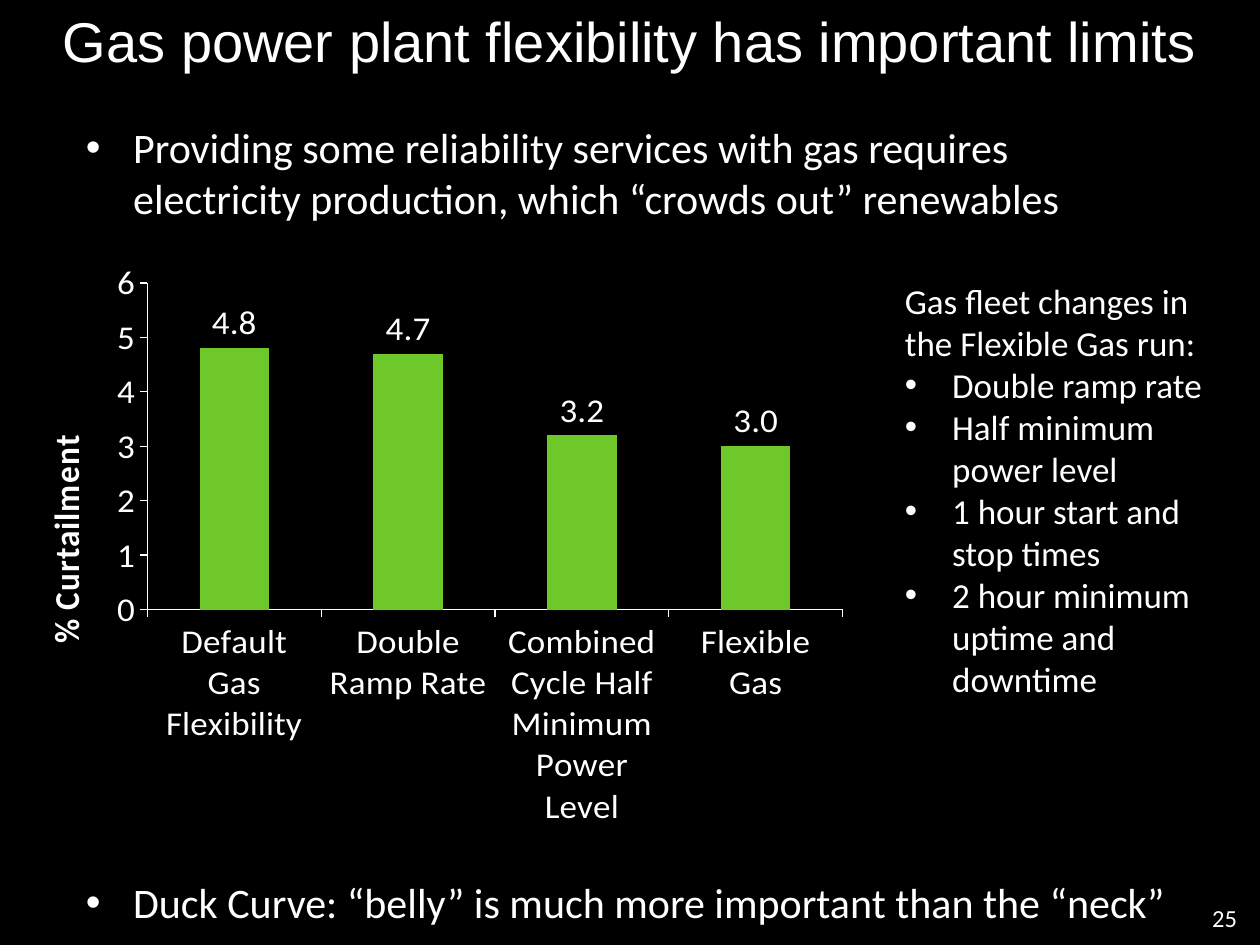
from lxml import etree
from pptx import Presentation
from pptx.chart.data import CategoryChartData
from pptx.dml.color import RGBColor
from pptx.enum.chart import XL_CHART_TYPE as ChartType, XL_LABEL_POSITION as LabelPosition, XL_TICK_MARK as TickMark
from pptx.enum.shapes import MSO_SHAPE as Preset
from pptx.enum.text import MSO_ANCHOR as Anchor, PP_ALIGN as Align
from pptx.oxml import parse_xml
from pptx.oxml.ns import nsdecls, qn
from pptx.util import Pt

COLORS = {"background": "000000", "text": "FFFFFF", "bar": "6EC829"}
INDENT = 27


def color(name):
    return RGBColor.from_string(COLORS[name])


def write(paragraph, text, size=20, font="Calibri", align=Align.LEFT, bullet=False):
    paragraph.alignment = align
    run = paragraph.add_run()
    run.text = text
    run.font.size = Pt(size)
    run.font.name = font
    run.font.color.rgb = color("text")
    if bullet:
        properties = paragraph._p.get_or_add_pPr()
        properties.set("marL", str(Pt(INDENT)))
        properties.set("indent", str(-Pt(INDENT)))
        etree.SubElement(properties, qn("a:buFont")).set("typeface", "Arial")
        etree.SubElement(properties, qn("a:buChar")).set("char", "•")


class SlideBuilder:
    """Hold the style and current slide, and add each kind of element."""

    def __init__(self, presentation):
        self.slide = presentation.slides.add_slide(presentation.slide_layouts[6])
        fill = self.slide.background.fill
        fill.solid()
        fill.fore_color.rgb = color("background")

    def title(self, text, box):
        shape = self.slide.shapes.add_shape(Preset.RECTANGLE, *map(Pt, box))
        shape.shadow.inherit = False
        shape.fill.solid()
        shape.fill.fore_color.rgb = color("background")
        fill_color = shape.fill._xPr.find(".//" + qn("a:srgbClr"))
        etree.SubElement(fill_color, qn("a:alpha")).set("val", "40000")
        shape.line.fill.background()
        frame = shape.text_frame
        frame.word_wrap = True
        frame.vertical_anchor = Anchor.TOP
        write(frame.paragraphs[0], text, size=32, font="Arial", align=Align.CENTER)

    def text(self, lines, box, anchor=Anchor.TOP, first_bullet=True, **style):
        frame = self.slide.shapes.add_textbox(*map(Pt, box)).text_frame
        frame.word_wrap = True
        frame.vertical_anchor = anchor
        for index, line in enumerate(lines):
            paragraph = frame.add_paragraph() if index else frame.paragraphs[0]
            write(paragraph, line, bullet=index > 0 or first_bullet, **style)

    def column_chart(self, values, axis_title, box, plot):
        data = CategoryChartData(number_format="#,##0.0")
        data.categories = list(values)
        data.add_series("Series 1", list(values.values()))
        frame = self.slide.shapes.add_chart(ChartType.COLUMN_CLUSTERED, *map(Pt, box), data)
        chart = frame.chart
        chart.has_legend = False
        chart.has_title = False
        chart.font.size = Pt(20)
        chart.font.name = "Calibri"
        chart.font.color.rgb = color("text")

        for axis in (chart.category_axis, chart.value_axis):
            axis.has_major_gridlines = False
            axis.major_tick_mark = TickMark.OUTSIDE
            axis.minor_tick_mark = TickMark.NONE
            axis.format.line.color.rgb = color("text")
            axis.format.line.width = Pt(0.75)
        value_axis = chart.value_axis
        value_axis.minimum_scale = 0
        value_axis.maximum_scale = 6
        value_axis.major_unit = 1
        value_axis.tick_labels.number_format = "0"
        value_axis.tick_labels.number_format_is_linked = False
        write(value_axis.axis_title.text_frame.paragraphs[0], axis_title, align=None)
        value_axis.axis_title.text_frame.paragraphs[0].runs[0].font.bold = True

        bars = chart.plots[0]
        bars.gap_width = 150
        bars.vary_by_categories = False
        series = bars.series[0]
        series.format.fill.solid()
        series.format.fill.fore_color.rgb = color("bar")
        labels = series.data_labels
        labels.show_value = True
        labels.number_format = "#,##0.0"
        labels.number_format_is_linked = False
        labels.position = LabelPosition.OUTSIDE_END
        self.place_plot(chart, plot)

    def place_plot(self, chart, plot):
        sides = "".join(f'<c:{name} val="{value}"/>' for name, value in zip("xywh", plot))
        layout = parse_xml(
            f'<c:layout {nsdecls("c")}><c:manualLayout><c:layoutTarget val="inner"/>'
            f'<c:xMode val="edge"/><c:yMode val="edge"/>{sides}</c:manualLayout></c:layout>'
        )
        area = chart._chartSpace.find(".//" + qn("c:plotArea"))
        for existing in area.findall(qn("c:layout")):
            area.remove(existing)
        area.insert(0, layout)


def main():
    presentation = Presentation()
    presentation.slide_width = Pt(720)
    presentation.slide_height = Pt(540)
    builder = SlideBuilder(presentation)
    builder.title("Gas power plant flexibility has important limits", (0, 0, 720, 46))
    builder.text(["25"], (678, 510, 36, 29), anchor=Anchor.MIDDLE,
                 first_bullet=False, size=14, align=Align.RIGHT)
    builder.text(
        ["Gas fleet changes in the Flexible Gas run:", "Double ramp rate",
         "Half minimum power level", "1 hour start and stop times",
         "2 hour minimum uptime and downtime"],
        (510, 156, 199, 250), first_bullet=False)
    builder.text(
        ["Providing some reliability services with gas requires electricity "
         "production, which “crowds out” renewables"],
        (42, 66, 642, 66), size=24)
    builder.column_chart(
        {"Default Gas Flexibility": 4.8, "Double Ramp Rate": 4.7,
         "Combined Cycle Half Minimum Power Level": 3.2, "Flexible Gas": 3.0},
        "% Curtailment", (12, 150, 516, 322.5), (0.14, 0.02, 0.77, 0.61))
    builder.text(["Duck Curve: “belly” is much more important than the “neck”"],
                 (42, 497.5, 642, 36), size=24)
    presentation.save("out.pptx")


if __name__ == "__main__":
    main()
